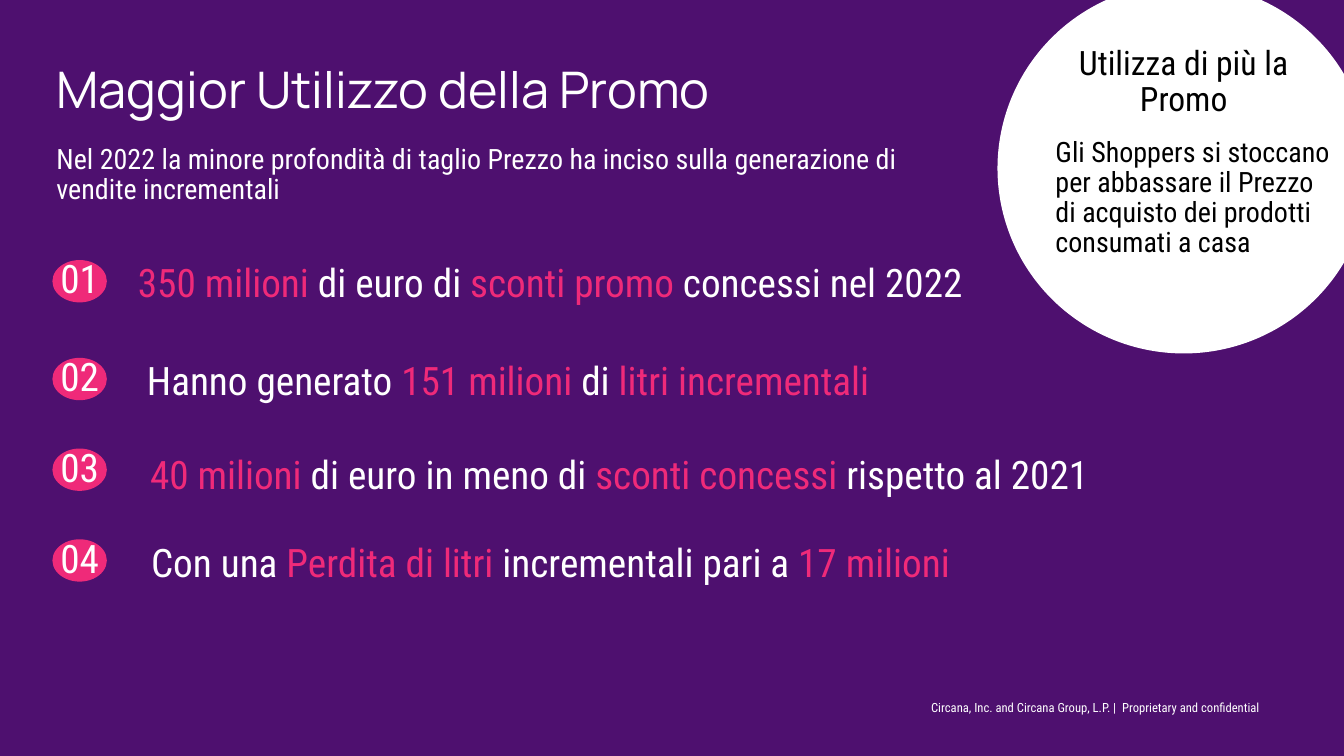
from dataclasses import dataclass, field

from pptx import Presentation
from pptx import util as u
from pptx.dml.color import RGBColor
from pptx.enum import shapes, text

PURPLE = RGBColor(0x4E, 0x10, 0x6F)
PINK = RGBColor(0xEF, 0x2A, 0x79)
WHITE = RGBColor(0xFF, 0xFF, 0xFF)
BLACK = RGBColor(0x00, 0x00, 0x00)

# The slide is a grid of 133.3 columns by 75 rows
COLUMNS, ROWS = 133.3, 75
CELL = u.Inches(0.1)
BODY_FONT, TITLE_FONT = "Roboto Condensed", "Manrope"
NO_INSETS = dict.fromkeys(
    ("margin_left", "margin_top", "margin_right", "margin_bottom"), 0)
BOTTOM = {"vertical_anchor": text.MSO_ANCHOR.BOTTOM}
TIGHT = {"line_spacing": 0.9, "space_after": u.Pt(14)}


@dataclass
class Area:
    column: float
    row: float
    columns: float
    rows: float

    def box(self) -> list[int]:
        lengths = (self.column, self.row, self.columns, self.rows)
        return [round(length * CELL) for length in lengths]


@dataclass
class Run:
    words: str
    color: RGBColor = WHITE


@dataclass
class TextBlock:
    area: Area
    runs: list[Run]
    size: float
    font: str = BODY_FONT
    frame: dict = field(default_factory=dict)
    paragraph: dict = field(default_factory=dict)


@dataclass
class Point:
    number: str
    badge_row: float
    message: TextBlock


def apply(target, formats: dict) -> None:
    for name, value in formats.items():
        setattr(target, name, value)


def write(frame, block: TextBlock) -> None:
    apply(frame, {"word_wrap": True, **block.frame})
    paragraph = frame.paragraphs[0]
    apply(paragraph, block.paragraph)
    for part in block.runs:
        run = paragraph.add_run()
        run.text = part.words
        apply(run.font, {"name": block.font, "size": u.Pt(block.size)})
        run.font.color.rgb = part.color


def add_text(slide, block: TextBlock) -> None:
    write(slide.shapes.add_textbox(*block.area.box()).text_frame, block)


def add_ellipse(slide, area: Area, fill: RGBColor):
    ellipse = slide.shapes.add_shape(shapes.MSO_SHAPE.OVAL, *area.box())
    ellipse.shadow.inherit = False
    ellipse.fill.solid()
    ellipse.fill.fore_color.rgb = fill
    ellipse.line.fill.background()
    return ellipse


def add_point(slide, point: Point) -> None:
    area = Area(5.2, point.badge_row, 5.4, 4.2)
    badge = add_ellipse(slide, area, PINK)
    write(badge.text_frame, TextBlock(
        area, [Run(point.number)], 28,
        frame={"word_wrap": False, "vertical_anchor": text.MSO_ANCHOR.MIDDLE},
        paragraph={**TIGHT, "alignment": text.PP_ALIGN.CENTER}))
    add_text(slide, point.message)


HEADINGS = [
    TextBlock(Area(5.6, 6.4, 75.2, 6), [Run("Maggior Utilizzo della Promo")],
              36, TITLE_FONT, NO_INSETS, {"line_spacing": 0.9}),
    TextBlock(Area(5.6, 14.4, 90.8, 5),
              [Run("Nel 2022 la minore profondità di taglio Prezzo ha inciso "
                   "sulla generazione di vendite incrementali")],
              20, frame=NO_INSETS, paragraph=TIGHT),
]
CALLOUT_CIRCLE = Area(99, -1.6, 36.8, 36.6)
CALLOUT = [
    TextBlock(Area(105.7, 4.1, 23.4, 7.1),
              [Run("Utilizza di più la Promo", BLACK)], 24,
              paragraph={**TIGHT, "alignment": text.PP_ALIGN.CENTER}),
    TextBlock(Area(103.7, 13.2, 29.8, 14.8),
              [Run("Gli Shoppers si stoccano per abbassare il Prezzo di "
                   "acquisto dei prodotti consumati a casa", BLACK)],
              20, paragraph=TIGHT),
]
POINTS = [
    Point("01", 25.8, TextBlock(
        Area(12.7, 24.5, 93.3, 6.3),
        [Run("350 milioni", PINK), Run(" di euro di "),
         Run("sconti promo ", PINK), Run("concessi nel 2022")],
        28, frame=BOTTOM,
        paragraph={"line_spacing": 0.9, "space_after": u.Pt(2)})),
    Point("02", 35.5, TextBlock(
        Area(13.6, 34.9, 82.3, 10.4),
        [Run("Hanno generato "), Run("151 milioni ", PINK),
         Run("di "), Run("litri incrementali", PINK)], 28)),
    Point("03", 44.5, TextBlock(
        Area(13.9, 44.2, 97.7, 10.4),
        [Run("40 milioni ", PINK), Run("di euro in meno di "),
         Run("sconti concessi ", PINK), Run("rispetto al 2021")], 28)),
    Point("04", 53.5, TextBlock(
        Area(14, 52.9, 97.7, 10.4),
        [Run("Con una "), Run("Perdita di litri ", PINK),
         Run("incrementali pari a "), Run("17 milioni", PINK)], 28)),
]
FOOTER = TextBlock(
    Area(82.9, 69, 42, 2),
    [Run("Circana, Inc. and Circana Group, L.P. |\u00a0 "
         "Proprietary and confidential")],
    9, frame={**NO_INSETS, **BOTTOM},
    paragraph={"line_spacing": 0.9, "alignment": text.PP_ALIGN.RIGHT})


def main() -> None:
    deck = Presentation()
    deck.slide_width = round(COLUMNS * CELL)
    deck.slide_height = ROWS * CELL
    slide = deck.slides.add_slide(deck.slide_layouts[6])
    slide.background.fill.solid()
    slide.background.fill.fore_color.rgb = PURPLE

    # Footer and headings
    for block in (FOOTER, *HEADINGS):
        add_text(slide, block)

    # Callout in the corner
    circle = add_ellipse(slide, CALLOUT_CIRCLE, WHITE)
    circle.line.color.rgb = WHITE
    circle.line.width = u.Pt(1)
    for block in CALLOUT:
        add_text(slide, block)

    # Numbered points
    for point in POINTS:
        add_point(slide, point)

    deck.save("out.pptx")


if __name__ == "__main__":
    main()
